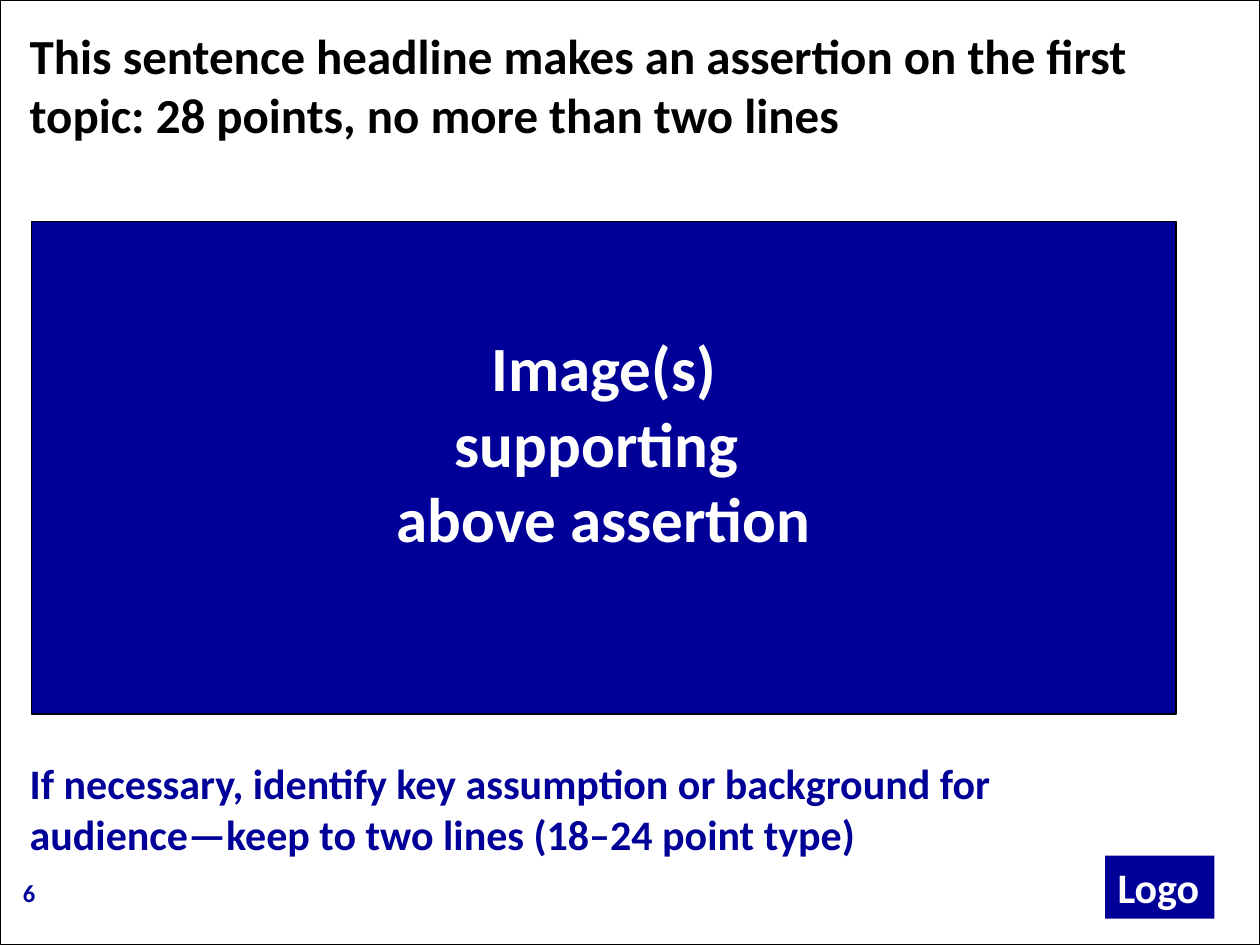
import pptx
import pptx.dml.color
import pptx.enum.shapes
import pptx.enum.text
import pptx.util

Pt = pptx.util.Pt
RGB = pptx.dml.color.RGBColor.from_string
ALIGN = pptx.enum.text.PP_ALIGN
ANCHOR = pptx.enum.text.MSO_ANCHOR
RECTANGLE = pptx.enum.shapes.MSO_SHAPE.RECTANGLE

THEME = {
    "font": "Calibri",
    "black": RGB("000000"), "white": RGB("FFFFFF"), "navy": RGB("000099"),
    "headline": Pt(28), "image": Pt(36), "caption": Pt(24),
    "logo": Pt(24), "number": Pt(14),
}


def write(box, text, size, color, align=ALIGN.LEFT, **frame_format):
    """Fill a box with bold text in the theme font."""
    frame = box.text_frame
    settings = {"word_wrap": True, "vertical_anchor": ANCHOR.TOP,
                "auto_size": pptx.enum.text.MSO_AUTO_SIZE.NONE}
    for name, value in {**settings, **frame_format}.items():
        setattr(frame, name, value)
    frame.text = text
    for para in frame.paragraphs:
        para.alignment = align
        for span in para.runs:
            span.font.color.rgb = THEME[color]
            for name, value in {"name": THEME["font"], "size": THEME[size], "bold": True}.items():
                setattr(span.font, name, value)


def add_panel(page, left, top, width, height, fill=None, line_width=None):
    """Add a flat rectangle with an optional fill and black outline."""
    panel = page.shapes.add_shape(RECTANGLE, Pt(left), Pt(top), Pt(width), Pt(height))
    panel.shadow.inherit = False
    if fill:
        panel.fill.solid()
        panel.fill.fore_color.rgb = THEME[fill]
    else:
        panel.fill.background()
    if line_width:
        panel.line.color.rgb = THEME["black"]
        panel.line.width = Pt(line_width)
    else:
        panel.line.fill.background()
    return panel


# Deck and page, with a thin frame around the page
deck = pptx.Presentation()
deck.slide_width, deck.slide_height = Pt(720), Pt(540)
page = deck.slides.add_slide(deck.slide_layouts[5])
add_panel(page, 0, 0, 720, 540, line_width=0.5)

tight = {"margin_left": Pt(5), "margin_right": Pt(5),
         "margin_top": Pt(2.4), "margin_bottom": Pt(2.4)}

# Headline
headline = page.shapes.title
for name, value in {"left": 12, "top": 12, "width": 670, "height": 71}.items():
    setattr(headline, name, Pt(value))
write(headline, "This sentence headline makes an assertion on the first topic: "
      "28 points, no more than two lines", "headline", "black", **tight)

# Image area, its text set a little above the middle
image_area = add_panel(page, 18, 126.5, 654, 281.5, "navy", 0.75)
write(image_area, "Image(s)\nsupporting \vabove assertion", "image", "white", ALIGN.CENTER,
      vertical_anchor=ANCHOR.MIDDLE, margin_bottom=Pt(33))

# Caption
caption = page.shapes.add_textbox(Pt(12), Pt(430.5), Pt(630), Pt(62))
write(caption, "If necessary, identify key assumption or background for "
      "audience—keep to two lines (18–24 point type)", "caption", "navy", **tight)

# Footer: page number and logo block
number = page.shapes.add_textbox(Pt(6), Pt(498), Pt(150), Pt(36))
write(number, "6", "number", "navy")
logo = add_panel(page, 631.5, 489, 62.5, 36, "navy")
write(logo, "Logo", "logo", "white", word_wrap=False)

deck.save("out.pptx")
